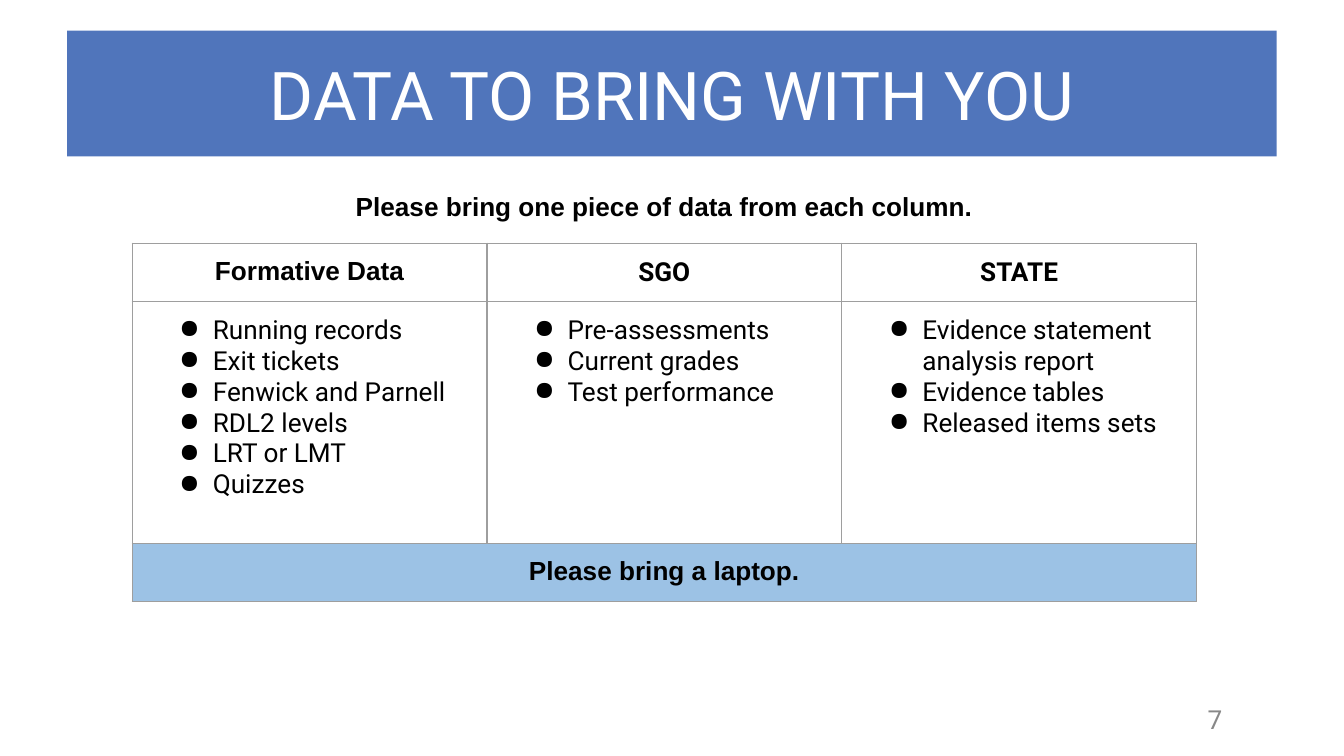
from dataclasses import dataclass
from lxml.etree import SubElement as Sub
from pptx import Presentation
from pptx.dml.color import RGBColor as RGB
from pptx.enum.shapes import MSO_SHAPE as Kind
from pptx.enum.text import MSO_ANCHOR as Anchor, PP_ALIGN as Align
from pptx.oxml.ns import qn
from pptx.util import Pt


@dataclass
class Theme:
    head: str = "Roboto"
    body: str = "Arial"
    big: float = 36
    base: float = 14
    blue: str = "5075BB"
    sky: str = "9CC2E5"
    line: str = "9E9E9E"
    gray: str = "888888"
    ink: str = "000000"
    white: str = "FFFFFF"


def write(frame, text, font, size, color, bold=False, align=Align.CENTER,
          bullet=False, anchor=Anchor.TOP, pad=7.2):
    frame.word_wrap = True
    frame.vertical_anchor = anchor
    frame.margin_left = frame.margin_right = Pt(7.2)
    frame.margin_top = frame.margin_bottom = Pt(pad)
    for i, item in enumerate(text.split("\n")):
        para = frame.paragraphs[0] if i == 0 else frame.add_paragraph()
        para.alignment = align
        if bullet:
            props = para._p.get_or_add_pPr()
            props.set("marL", str(Pt(36)))
            props.set("indent", str(Pt(-18)))
            tint = Sub(props, qn("a:buClr"))
            Sub(tint, qn("a:srgbClr"), val=color)
            Sub(props, qn("a:buChar"), char="●")
        run = para.add_run()
        run.text = item
        run.font.name = font
        run.font.size = Pt(size)
        run.font.bold = bold
        run.font.color.rgb = RGB.from_string(color)


class Deck:
    def __init__(self, theme, wide, high):
        self.theme = theme
        self.file = Presentation()
        self.file.slide_width, self.file.slide_height = Pt(wide), Pt(high)
        self.slide = self.file.slides.add_slide(self.file.slide_layouts[6])

    def bar(self, box, text, fill, **form):
        shape = self.slide.shapes.add_shape(Kind.RECTANGLE, *map(Pt, box))
        shape.shadow.inherit = False
        shape.fill.solid()
        shape.fill.fore_color.rgb = RGB.from_string(fill)
        shape.line.fill.background()
        write(shape.text_frame, text, **form)

    def label(self, box, text, **form):
        shape = self.slide.shapes.add_textbox(*map(Pt, box))
        write(shape.text_frame, text, **form)

    def grid(self, box, rows, cols):
        frame = self.slide.shapes.add_table(len(rows), cols, *map(Pt, box))
        table = frame.table
        table.first_row = table.horz_banding = False
        for row, high in zip(table.rows, rows):
            row.height = Pt(high)
        for col in table.columns:
            col.width = Pt(box[2] / cols)
        for cell in table.iter_cells():
            self.edge(cell)
            cell.fill.background()
        return table

    def edge(self, cell):
        props = cell._tc.get_or_add_tcPr()
        for side in ("lnL", "lnR", "lnT", "lnB"):
            line = Sub(props, qn("a:" + side), w=str(Pt(0.75)))
            fill = Sub(line, qn("a:solidFill"))
            Sub(fill, qn("a:srgbClr"), val=self.theme.line)

    def cell(self, cell, text, fill=None, **form):
        if fill:
            cell.fill.solid()
            cell.fill.fore_color.rgb = RGB.from_string(fill)
        frame = cell.text_frame
        write(frame, text, **form)
        cell.margin_left = cell.margin_right = Pt(7.2)
        cell.margin_top = cell.margin_bottom = Pt(7.2)


def main():
    look = Theme()
    deck = Deck(look, 720, 405)
    left, wide = 70.8, 570.24
    strong = dict(font=look.body, size=look.base, color=look.ink, bold=True)
    plain = dict(font=look.head, size=look.base, color=look.ink)

    deck.label((612, 374.4, 77.76, 21.6), "7", font=look.head, size=look.base,
               color=look.gray, anchor=Anchor.MIDDLE, pad=3.6)
    deck.bar((36, 16.4, 648, 67.4), "DATA TO BRING WITH YOU", look.blue,
             font=look.head, size=look.big, color=look.white,
             anchor=Anchor.MIDDLE, pad=3.6)

    lists = {
        "Formative Data": ["Running records", "Exit tickets",
                           "Fenwick and Parnell", "RDL2 levels",
                           "LRT or LMT", "Quizzes"],
        "SGO": ["Pre-assessments", "Current grades", "Test performance"],
        "STATE": ["Evidence statement analysis report", "Evidence tables",
                  "Released items sets"],
    }
    rows = (31, 129.6, 30.2)
    table = deck.grid((left, 130.3, wide, sum(rows)), rows, len(lists))
    for col, (name, items) in enumerate(lists.items()):
        font = look.head if col else look.body
        deck.cell(table.cell(0, col), name, **{**strong, "font": font})
        deck.cell(table.cell(1, col), "\n".join(items), bullet=True,
                  align=Align.LEFT, **plain)
    foot = table.cell(2, 0)
    foot.merge(table.cell(2, len(lists) - 1))
    deck.cell(foot, "Please bring a laptop.", look.sky, **strong)

    deck.label((left, 94.6, wide, 25.2),
               "Please bring one piece of data from each column.", **strong)
    deck.file.save("out.pptx")


if __name__ == "__main__":
    main()
